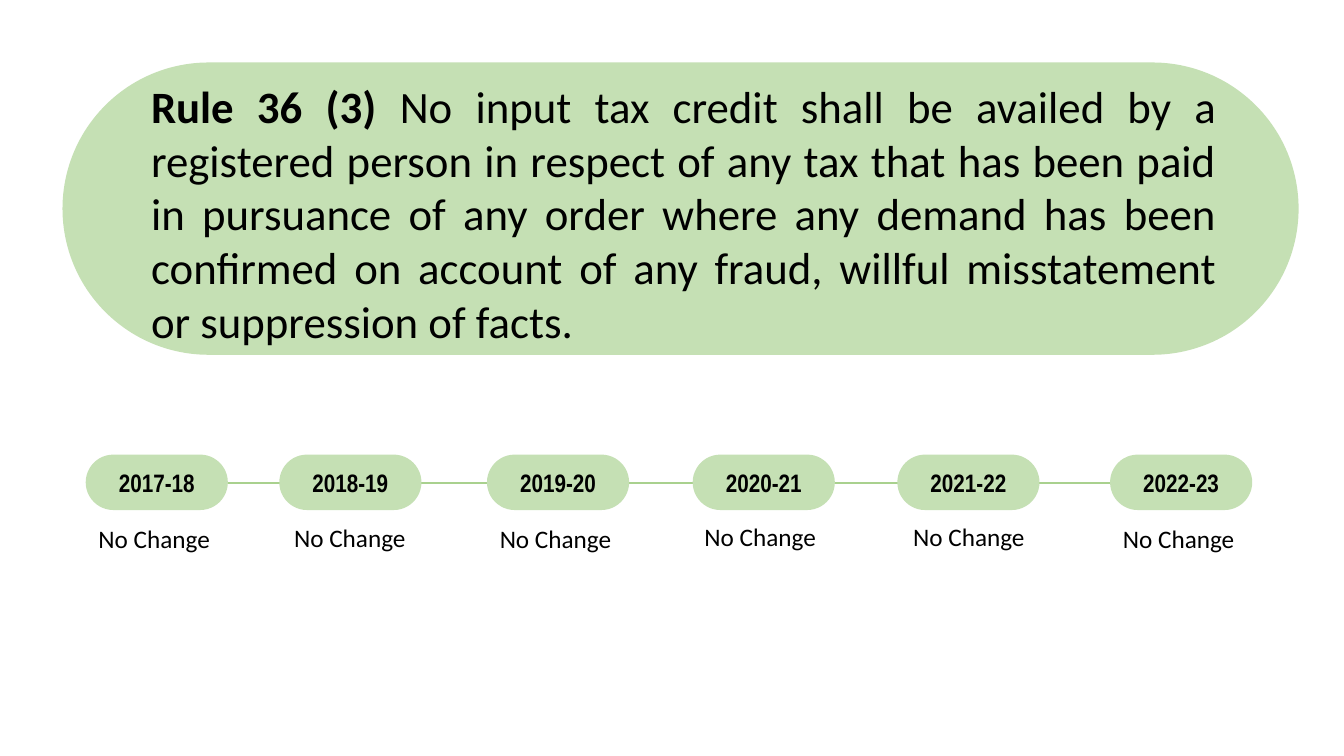
from pptx import Presentation
from pptx.dml.color import RGBColor
from pptx.enum.shapes import MSO_CONNECTOR as Line, MSO_SHAPE as Shape
from pptx.enum.text import MSO_ANCHOR as Anchor, PP_ALIGN as Align
from pptx.oxml.ns import qn
from pptx.util import Inches, Pt
from lxml.etree import SubElement

BLACK = RGBColor(0x00, 0x00, 0x00)
PALE = RGBColor(0xC5, 0xE0, 0xB4)
GREEN = RGBColor(0xA9, 0xD1, 0x8E)

RULE = [
    ("Rule 36 (3)", True),
    (" No input tax credit shall be availed by a registered person in respect "
     "of any tax that has been paid in pursuance of any order where any demand "
     "has been confirmed on account of any fraud, willful misstatement or "
     "suppression of facts.", False),
]

# Year, pill left, then label left, top and width
YEARS = [
    ("2017-18", 0.85, 0.78, 5.13, 1.5),
    ("2018-19", 2.77, 2.72, 5.12, 1.5),
    ("2019-20", 4.83, 4.76, 5.13, 1.5),
    ("2020-21", 6.87, 6.52, 5.11, 2.04),
    ("2021-22", 8.9, 8.59, 5.11, 2.04),
    ("2022-23", 11.01, 10.94, 5.13, 1.5),
]


def write(frame, runs, size=18, font="Calibri", align=Align.CENTER,
          anchor=Anchor.TOP, space=None, inset=(0.1, 0.1)):
    """Fill a text frame with (text, bold) runs in one paragraph."""
    frame.word_wrap = True
    frame.vertical_anchor = anchor
    frame.margin_left = frame.margin_right = Inches(inset[0])
    frame.margin_top = frame.margin_bottom = Inches(inset[1])
    para = frame.paragraphs[0]
    para.alignment = align
    para.line_spacing = space
    for text, bold in runs:
        run = para.add_run()
        run.text = text
        run.font.name = font
        run.font.size = Pt(size)
        run.font.bold = bold
        run.font.color.rgb = BLACK


class Page:
    def __init__(self, slide, fill=PALE, stroke=GREEN):
        self.shapes = slide.shapes
        self.fill = fill
        self.stroke = stroke

    def pill(self, *box):
        shape = self.shapes.add_shape(Shape.ROUNDED_RECTANGLE, *map(Inches, box))
        shape.adjustments[0] = 0.5
        shape.shadow.inherit = False
        shape.fill.solid()
        shape.fill.fore_color.rgb = self.fill
        shape.line.fill.background()
        return shape

    def text(self, box, runs, **style):
        area = self.shapes.add_textbox(*map(Inches, box))
        write(area.text_frame, runs, **style)

    def line(self, *ends):
        line = self.shapes.add_connector(Line.STRAIGHT, *map(Inches, ends))
        line.line.color.rgb = self.stroke
        line.line.width = Pt(1.5)
        SubElement(line._element.spPr, qn("a:effectLst"))


def main():
    deck = Presentation()
    deck.slide_width, deck.slide_height = Inches(13.33), Inches(7.5)
    page = Page(deck.slides.add_slide(deck.slide_layouts[6]))

    # Rule banner
    page.pill(0.62, 0.62, 12.26, 2.9)
    page.text((1.4, 0.73, 10.77, 2.79), RULE, size=32, align=Align.JUSTIFY,
              inset=(0.1, 0.05))

    # Timeline of years
    page.line(1.68, 4.79, 12.24, 4.79)
    for year, left, start, top, width in YEARS:
        pill = page.pill(left, 4.51, 1.41, 0.55)
        write(pill.text_frame, [(year, True)], font="Arial Narrow",
              anchor=Anchor.MIDDLE)
        page.text((start, top, width, 0.68), [("No Change", False)], space=0.9)

    deck.save("out.pptx")


if __name__ == "__main__":
    main()
